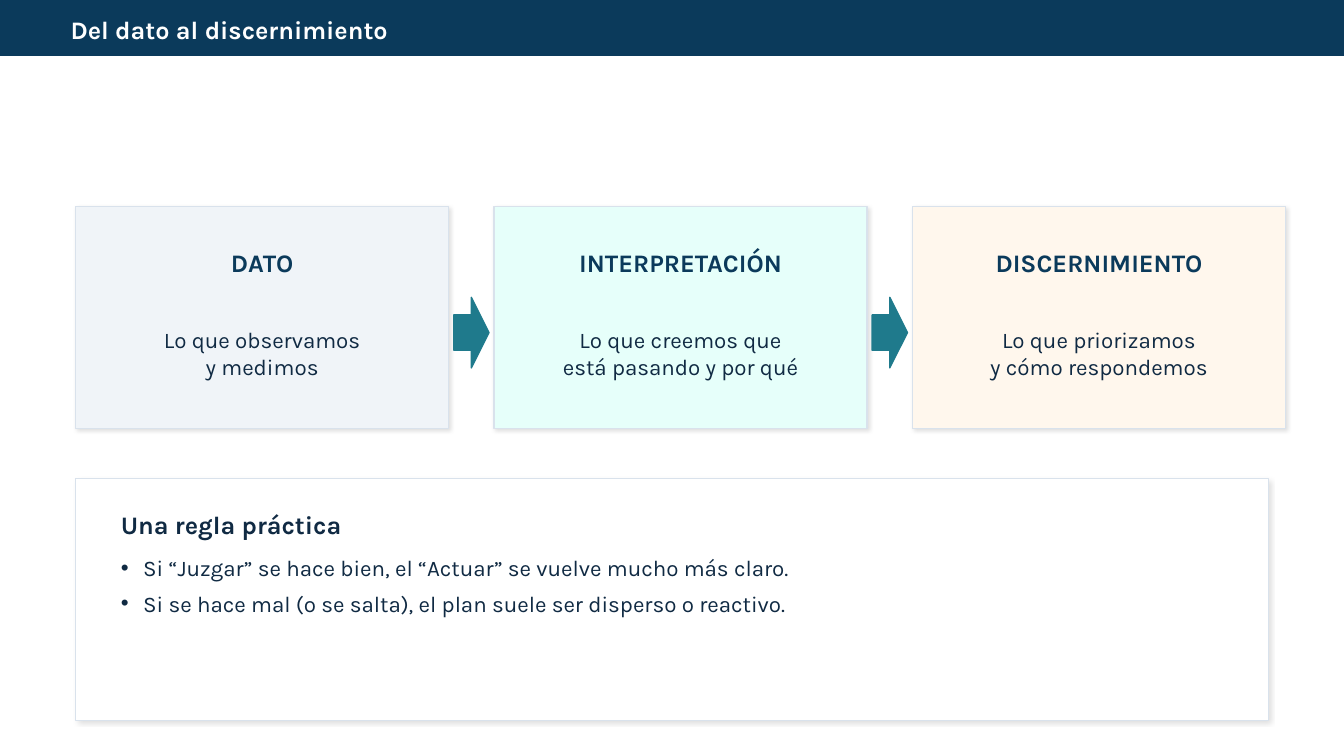
from lxml import etree
from pptx import Presentation
from pptx.dml.color import RGBColor
from pptx.enum.shapes import MSO_SHAPE
from pptx.enum.text import MSO_ANCHOR, MSO_AUTO_SIZE, PP_ALIGN
from pptx.oxml import parse_xml
from pptx.oxml.ns import nsdecls, qn
from pptx.util import Inches, Pt

RECT, ARROW = MSO_SHAPE.RECTANGLE, MSO_SHAPE.RIGHT_ARROW
TOP, MIDDLE = MSO_ANCHOR.TOP, MSO_ANCHOR.MIDDLE
LEFT, CENTER = PP_ALIGN.LEFT, PP_ALIGN.CENTER

CELL = 0.05  # inches per grid column and row
COLS, ROWS = 266.6, 150

COLORS = {
    "navy": "0B3A5B", "ink": "102A43", "teal": "1F7A8C", "border": "D9E2EC",
    "white": "FFFFFF", "gray": "F0F4F8", "mint": "E6FFFA", "cream": "FFF7ED",
}
FORMATS = {
    "heading": {"name": "Karla", "size": Pt(18), "bold": True},
    "body": {"name": "Karla", "size": Pt(16), "bold": False},
}

STEPS = [
    ("DATO", ["Lo que observamos", "y medimos"], "gray"),
    ("INTERPRETACIÓN", ["Lo que creemos que", "está pasando y por qué"], "mint"),
    ("DISCERNIMIENTO", ["Lo que priorizamos", "y cómo respondemos"], "cream"),
]
RULES = [
    "Si “Juzgar” se hace bien, el “Actuar” se vuelve mucho más claro.",
    "Si se hace mal (o se salta), el plan suele ser disperso o reactivo.",
]
MARGIN, STEP_TOP, STEP_W, STEP_H, STEP_PITCH = 15, 41, 74, 44, 83


def grid(*cells):
    return [Inches(n * CELL) for n in cells]


def rgb(name):
    return RGBColor.from_string(COLORS[name])


class Deck:
    def __init__(self):
        self.prs = Presentation()
        self.prs.slide_width, self.prs.slide_height = grid(COLS, ROWS)
        self.s = self.prs.slides.add_slide(self.prs.slide_layouts[1])

    def shape(self, kind, box, fill, line):
        sp = self.s.shapes.add_shape(kind, *grid(*box))
        sp.shadow.inherit = False
        sp.fill.solid()
        sp.fill.fore_color.rgb = rgb(fill)
        sp.line.color.rgb = rgb(line)
        sp.line.width = Pt(1)
        return sp

    def card(self, box, fill):
        sp = self.shape(RECT, box, fill, "border")
        effects = sp._element.spPr.find(qn("a:effectLst"))
        effects.append(parse_xml(
            f'<a:outerShdw {nsdecls("a")} blurRad="{Pt(3)}" dist="{Pt(1.5)}" '
            'dir="2700000" algn="ctr" rotWithShape="0"><a:srgbClr val="000000">'
            '<a:alpha val="12000"/></a:srgbClr></a:outerShdw>'))

    def fill_text(self, sp, lines, style, color, align=LEFT, anchor=MIDDLE,
                  bullets=False):
        tf = sp.text_frame
        tf.word_wrap = True
        tf.auto_size = MSO_AUTO_SIZE.NONE
        tf.vertical_anchor = anchor
        for i, line in enumerate(lines):
            p = tf.paragraphs[0] if i == 0 else tf.add_paragraph()
            p.alignment = align
            p.space_before = Pt(0)
            if bullets:
                self.bullet(p)
            r = p.add_run()
            r.text = line
            for key, value in FORMATS[style].items():
                setattr(r.font, key, value)
            r.font.color.rgb = rgb(color)

    def bullet(self, p):
        p.space_after = Pt(6)
        pPr = p._p.get_or_add_pPr()
        pPr.set("marL", str(Inches(0.22)))
        pPr.set("indent", str(-Inches(0.22)))
        etree.SubElement(pPr, qn("a:buFont"), typeface="Arial")
        etree.SubElement(pPr, qn("a:buChar"), char="•")

    def text(self, box, *args, **options):
        self.fill_text(self.s.shapes.add_textbox(*grid(*box)), *args, **options)

    def placeholder(self, index, box, *args, **options):
        """Fill a template placeholder and bring it to the front."""
        sp = self.s.placeholders[index]
        sp.left, sp.top, sp.width, sp.height = grid(*box)
        self.s.shapes._spTree.append(sp._element)
        self.fill_text(sp, *args, **options)


def main():
    deck = Deck()
    deck.shape(RECT, (0, 0, COLS, 11), "navy", "navy")
    deck.placeholder(0, (12, 2.4, 244, 7), ["Del dato al discernimiento"],
                     "heading", "white")

    for i, (name, lines, fill) in enumerate(STEPS):
        x = MARGIN + i * STEP_PITCH
        deck.card((x, STEP_TOP, STEP_W, STEP_H), fill)
        deck.text((x + 6, 48, 62, 8), [name], "heading", "navy", align=CENTER)
        deck.text((x + 7, 59, 60, 22), lines, "body", "ink", align=CENTER)
        if i:
            deck.shape(ARROW, (x - 8, 59, 7, 14), "teal", "teal")

    deck.card((MARGIN, 95, 236.6, 48), "white")
    deck.text((22, 100, 222.6, 8), ["Una regla práctica"], "heading", "ink")
    deck.placeholder(1, (22, 109, 222.6, 29), RULES, "body", "ink",
                     anchor=TOP, bullets=True)
    deck.prs.save("out.pptx")


if __name__ == "__main__":
    main()
